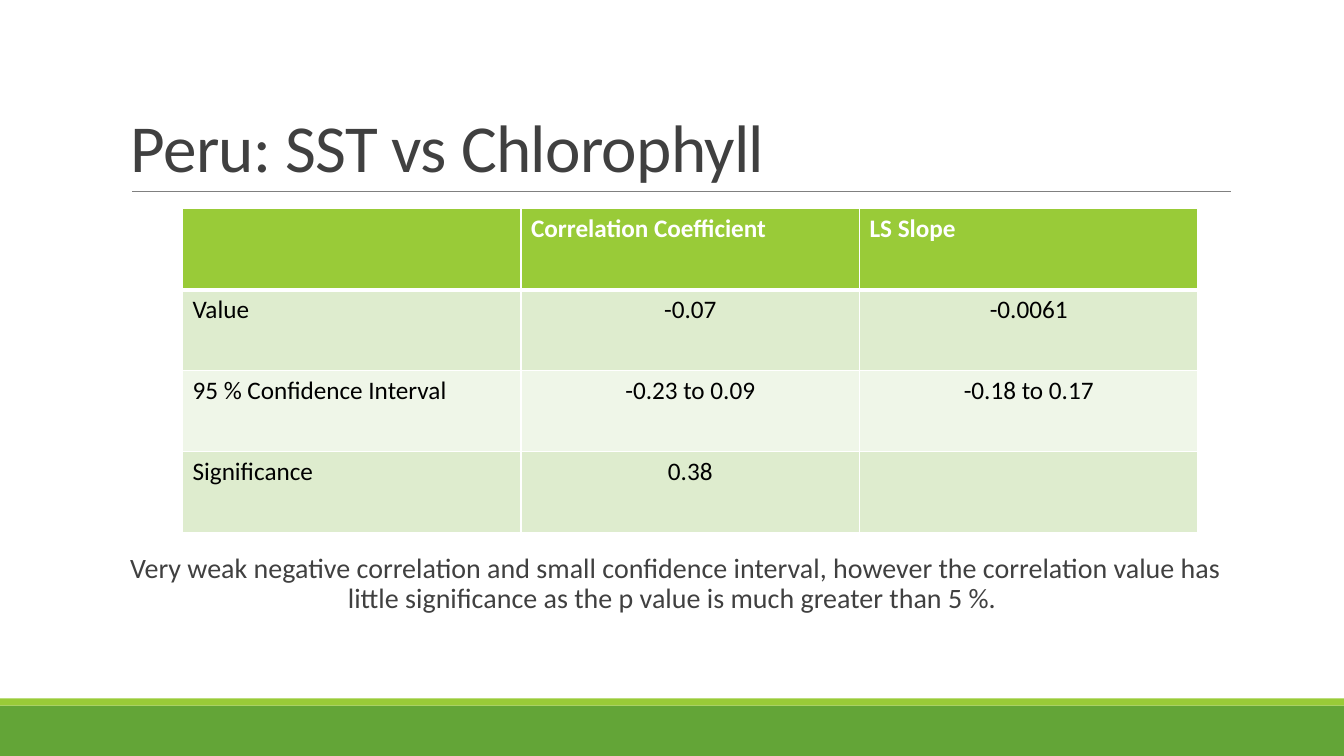
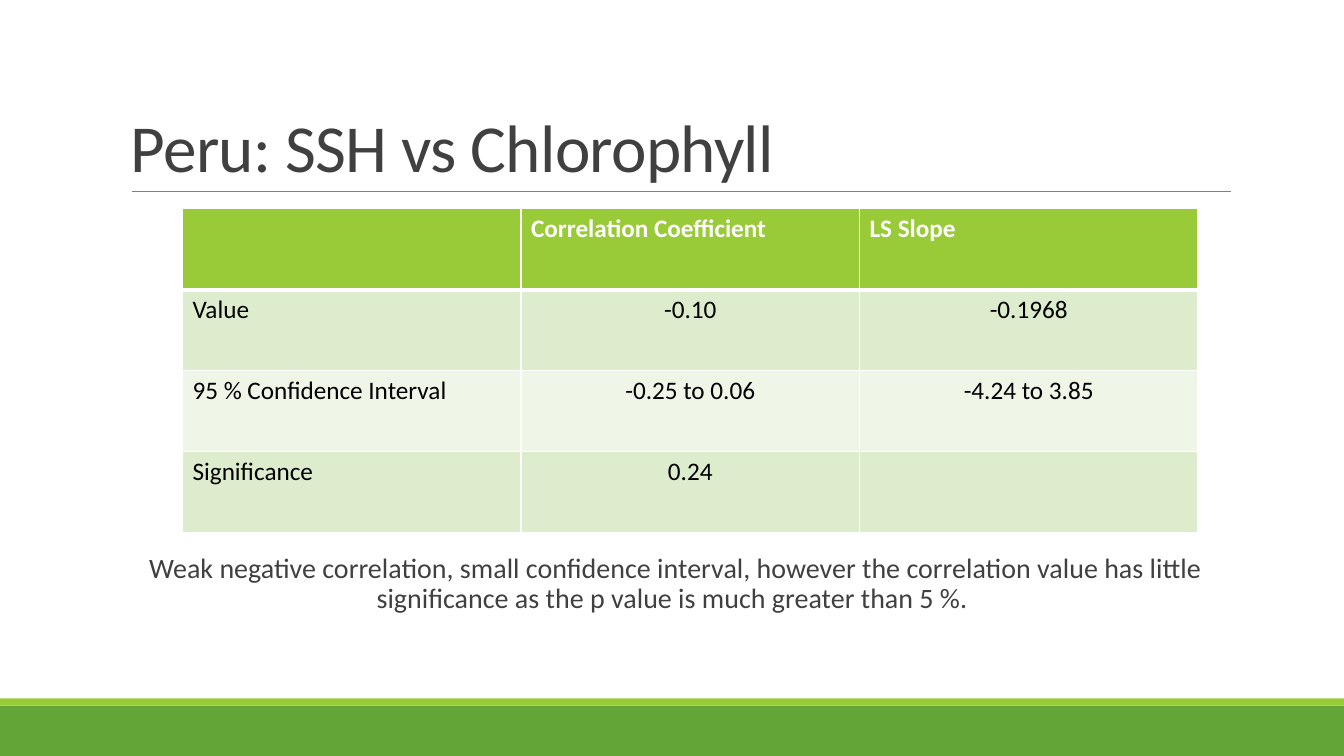
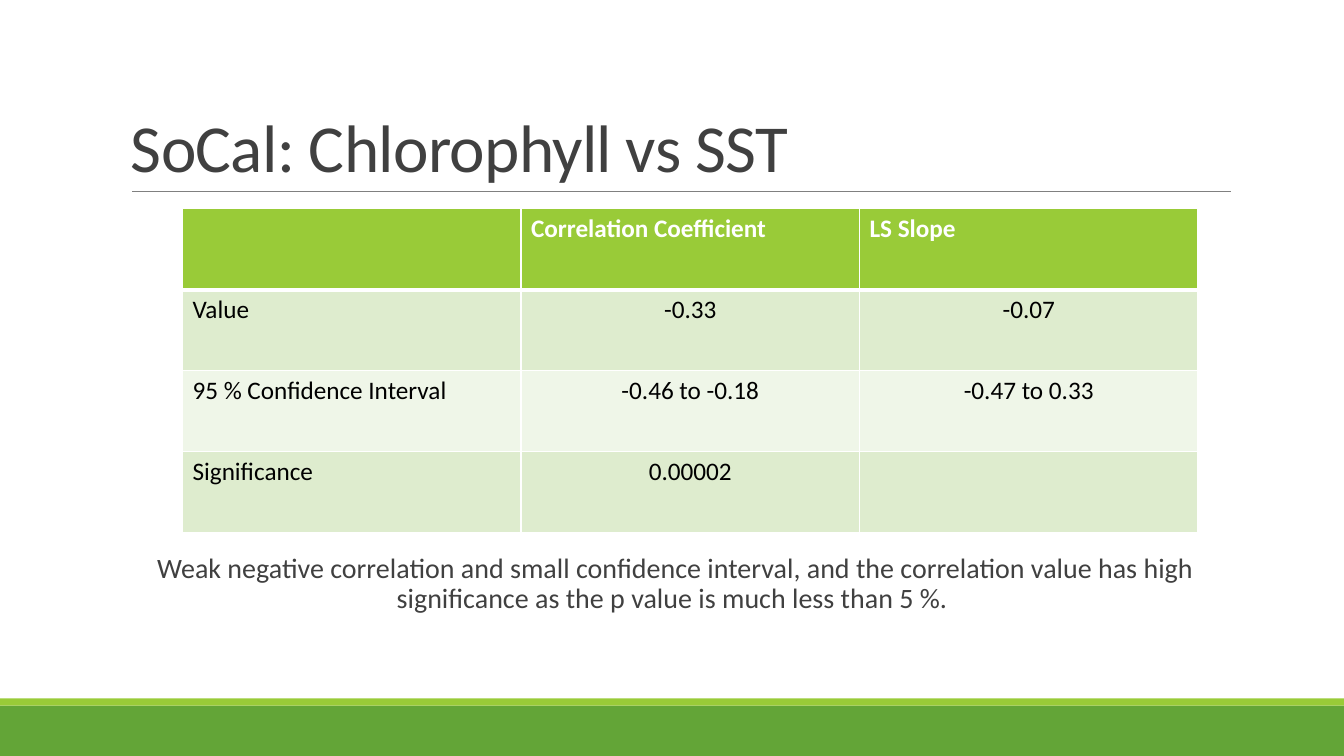
from lxml import etree
from pptx import Presentation
from pptx import util as u
from pptx.dml.color import RGBColor
from pptx.enum import shapes, text
from pptx.oxml.ns import qn

COLORS = {
    "band": "63A537",
    "accent": "99CB38",
    "rule": "808080",
    "text": "404040",
    "row_odd": "DEECCE",
    "row_even": "EFF6E8",
    "white": "FFFFFF",
    "black": "000000",
}
FONT = "Calibri"
SLIDE_WIDTH, SLIDE_HEIGHT = u.Cm(33.87), u.Cm(19.05)
TEXT_LEFT, TEXT_WIDTH = u.Cm(3.05), u.Cm(27.94)
RULE_LEFT, RULE_RIGHT, RULE_TOP = u.Cm(3.33), u.Cm(31.01), u.Cm(4.83)
COLUMN_WIDTH, ROW_HEIGHT = u.Cm(8.53), u.Cm(2.04)

HEADER = ["", "Correlation Coefficient", "LS Slope"]
ROW_LABELS = ["Value", "95 % Confidence Interval", "Significance"]

RESULTS = [
    (
        "Peru: SST vs Chlorophyll",
        [("-0.07", "-0.0061"), ("-0.23 to 0.09", "-0.18 to 0.17"), ("0.38", "")],
        "Very weak negative correlation and small confidence interval, however the "
        "correlation value has little significance as the p value is much greater than 5 %. ",
    ),
    (
        "Peru: SSH vs Chlorophyll",
        [("-0.10", "-0.1968"), ("-0.25 to 0.06", "-4.24 to 3.85"), ("0.24", "")],
        "Weak negative correlation, small confidence interval, however the "
        "correlation value has little significance as the p value is much greater than 5 %. ",
    ),
    (
        "SoCal: Chlorophyll vs SST",
        [("-0.33", "-0.07"), ("-0.46 to -0.18", "-0.47 to 0.33"), ("0.00002", "")],
        "Weak negative correlation and small confidence interval, and the "
        "correlation value has high significance as the p value is much less than 5 %. ",
    ),
]


def color(name):
    return RGBColor.from_string(COLORS[name])


def format_runs(paragraph, size, color_name, bold=False):
    for run in paragraph.runs:
        run.font.name = FONT
        run.font.size = u.Pt(size)
        run.font.bold = bold
        run.font.color.rgb = color(color_name)


def add_band(slide, top, height, color_name):
    band = slide.shapes.add_shape(
        shapes.MSO_SHAPE.RECTANGLE, 0, top, SLIDE_WIDTH, height)
    band.shadow.inherit = False
    band.fill.solid()
    band.fill.fore_color.rgb = color(color_name)
    band.line.fill.background()


def add_title_rule(slide):
    rule = slide.shapes.add_connector(
        shapes.MSO_CONNECTOR.STRAIGHT, RULE_LEFT, RULE_TOP, RULE_RIGHT, RULE_TOP)
    rule.line.color.rgb = color("rule")
    rule.line.width = u.Pt(0.5)
    etree.SubElement(rule.element.spPr, qn("a:effectLst"))


def add_text(slide, content, top, height, size):
    """Add a full-width text box and return its frame and paragraph."""
    frame = slide.shapes.add_textbox(TEXT_LEFT, top, TEXT_WIDTH, height).text_frame
    frame.word_wrap = True
    frame.text = content
    paragraph = frame.paragraphs[0]
    format_runs(paragraph, size, "text")
    return frame, paragraph


def add_title(slide, content):
    top = u.Cm(0.79)
    frame, paragraph = add_text(slide, content, top, RULE_TOP - top, 48)
    frame.vertical_anchor = text.MSO_ANCHOR.BOTTOM
    paragraph.line_spacing = 0.85
    for run in paragraph.runs:
        run.font._element.set("spc", "-50")


def add_conclusion(slide, content):
    frame, paragraph = add_text(slide, content, u.Cm(13.84), u.Cm(2.46), 20)
    frame.margin_left = frame.margin_right = 0
    paragraph.alignment = text.PP_ALIGN.CENTER
    paragraph.line_spacing = 0.9
    paragraph.space_before = u.Pt(12)
    paragraph.space_after = u.Pt(2)


def set_borders(cell, top=1, bottom=1):
    """Give a cell white borders; widths are in points."""
    properties = cell._tc.get_or_add_tcPr()
    for side, width in (("L", 1), ("R", 1), ("T", top), ("B", bottom)):
        line = etree.SubElement(properties, qn(f"a:ln{side}"), w=str(u.Pt(width)))
        fill = etree.SubElement(line, qn("a:solidFill"))
        etree.SubElement(fill, qn("a:srgbClr"), val=COLORS["white"])


def format_cell(cell, row, column):
    is_header = row == 0
    set_borders(cell, top=3 if row == 1 else 1, bottom=3 if is_header else 1)
    cell.fill.solid()
    fill_name = "accent" if is_header else "row_odd" if row % 2 else "row_even"
    cell.fill.fore_color.rgb = color(fill_name)
    paragraph = cell.text_frame.paragraphs[0]
    if column and not is_header:
        paragraph.alignment = text.PP_ALIGN.CENTER
    format_runs(paragraph, 18, "white" if is_header else "black", is_header)


def add_results_table(slide, values):
    rows = [HEADER] + [[label, *pair] for label, pair in zip(ROW_LABELS, values)]
    table = slide.shapes.add_table(
        len(rows), len(HEADER), u.Cm(4.6), u.Cm(5.26),
        COLUMN_WIDTH * len(HEADER), ROW_HEIGHT * len(rows)).table
    for row, contents in enumerate(rows):
        for column, content in enumerate(contents):
            cell = table.cell(row, column)
            cell.text_frame.text = content
            format_cell(cell, row, column)


def add_result_slide(presentation, title, values, conclusion):
    slide = presentation.slides.add_slide(presentation.slide_layouts[6])
    add_band(slide, u.Cm(17.78), u.Cm(1.27), "band")
    add_band(slide, u.Cm(17.6), u.Cm(0.18), "accent")
    add_title_rule(slide)
    add_title(slide, title)
    add_conclusion(slide, conclusion)
    add_results_table(slide, values)


def main():
    presentation = Presentation()
    presentation.slide_width = SLIDE_WIDTH
    presentation.slide_height = SLIDE_HEIGHT
    for result in RESULTS:
        add_result_slide(presentation, *result)
    presentation.save("out.pptx")


if __name__ == "__main__":
    main()
